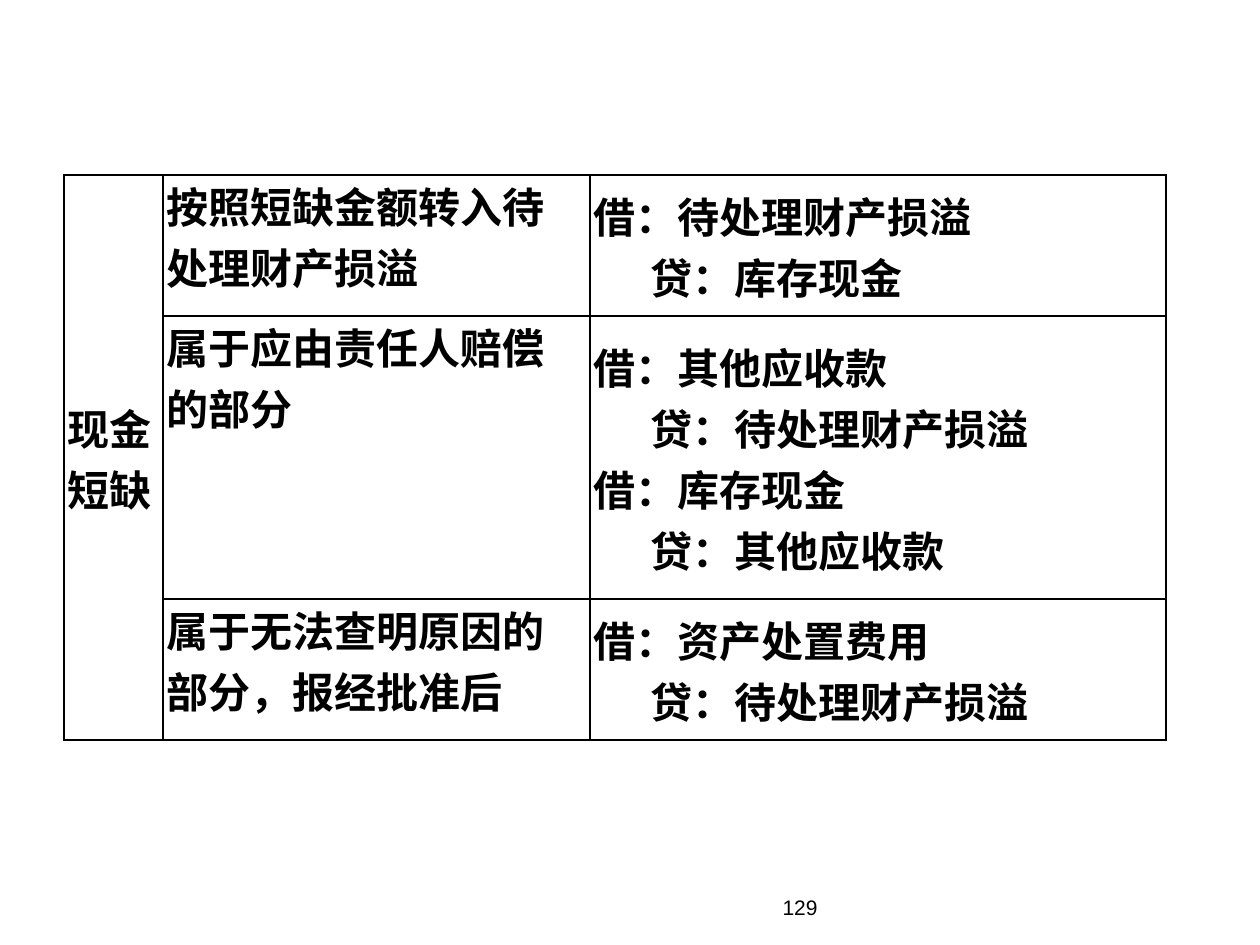
import dataclasses

import lxml.etree
import pptx
import pptx.dml.color
import pptx.enum.text
import pptx.oxml.ns
import pptx.util

EMU_PER_PX = 914400 / 126
ANCHOR = pptx.enum.text.MSO_ANCHOR
ALIGN = pptx.enum.text.PP_ALIGN


@dataclasses.dataclass(frozen=True)
class Theme:
    ink: str = "000000"
    body_font: str = "Noto Sans CJK SC"
    number_font: str = "Arial"
    body_size: int = 24
    number_size: int = 12
    border_width: int = 1
    cell_inset: int = 4
    credit_indent: int = 57


def px(length):
    return pptx.util.Emu(round(length * EMU_PER_PX))


def add_child(parent, tag, **attributes):
    return lxml.etree.SubElement(parent, pptx.oxml.ns.qn(tag), attributes)


def write_text(paragraph, text, *, font, size, color, bold=False, align=ALIGN.LEFT, indent=0):
    paragraph.alignment = align
    if indent:
        paragraph._p.get_or_add_pPr().set("marL", str(px(indent)))
    run = paragraph.add_run()
    run.text = text
    run.font.name = font
    run.font.size = pptx.util.Pt(size)
    run.font.bold = bold
    run.font.color.rgb = pptx.dml.color.RGBColor.from_string(color)
    add_child(run._r.get_or_add_rPr(), "a:ea", typeface=font)


class SlideBuilder:
    """Draws tables and text on the current slide in one theme."""

    def __init__(self, slide, theme):
        self.slide = slide
        self.theme = theme

    def border(self, cell):
        properties = cell._tc.get_or_add_tcPr()
        width = str(pptx.util.Pt(self.theme.border_width))
        for side in ("a:lnL", "a:lnR", "a:lnT", "a:lnB"):
            line = add_child(properties, side, w=width)
            add_child(add_child(line, "a:solidFill"), "a:srgbClr", val=self.theme.ink)

    def fill_cell(self, cell, lines, anchor):
        theme = self.theme
        cell.vertical_anchor = anchor
        for index, (text, indent) in enumerate(lines):
            frame = cell.text_frame
            paragraph = frame.add_paragraph() if index else frame.paragraphs[0]
            write_text(paragraph, text, font=theme.body_font, size=theme.body_size,
                       color=theme.ink, bold=True, indent=indent)

    def table(self, left, top, widths, heights):
        frame = self.slide.shapes.add_table(
            len(heights), len(widths), px(left), px(top), px(sum(widths)), px(sum(heights)))
        table = frame.table
        table.first_row = table.horz_banding = False
        for column, width in zip(table.columns, widths):
            column.width = px(width)
        for row, height in zip(table.rows, heights):
            row.height = px(height)
        for cell in table.iter_cells():
            cell.margin_left = cell.margin_right = px(self.theme.cell_inset)
            cell.margin_top = cell.margin_bottom = 0
            self.border(cell)
            cell.fill.background()
        return table

    def slide_number(self, text, left, top, width, height):
        box = self.slide.shapes.add_textbox(px(left), px(top), px(width), px(height))
        frame = box.text_frame
        frame.word_wrap = True
        frame.vertical_anchor = ANCHOR.BOTTOM
        write_text(frame.paragraphs[0], text, font=self.theme.number_font,
                   size=self.theme.number_size, color=self.theme.ink, align=ALIGN.RIGHT)


def main():
    presentation = pptx.Presentation()
    presentation.slide_width = px(1260)
    presentation.slide_height = px(945)
    slide = presentation.slides.add_slide(presentation.slide_layouts[6])
    theme = Theme()
    builder = SlideBuilder(slide, theme)

    cases = [
        ("按照短缺金额转入待处理财产损溢", [("待处理财产损溢", "库存现金")]),
        ("属于应由责任人赔偿的部分", [("其他应收款", "待处理财产损溢"), ("库存现金", "其他应收款")]),
        ("属于无法查明原因的部分，报经批准后", [("资产处置费用", "待处理财产损溢")]),
    ]
    table = builder.table(64, 175, widths=[99, 427, 576], heights=[141, 283, 141])
    table.cell(0, 0).merge(table.cell(len(cases) - 1, 0))
    builder.fill_cell(table.cell(0, 0), [("现金短缺", 0)], ANCHOR.MIDDLE)
    for row, (situation, entries) in enumerate(cases):
        builder.fill_cell(table.cell(row, 1), [(situation, 0)], ANCHOR.TOP)
        lines = []
        for debit, credit in entries:
            lines += [(f"借：{debit}", 0), (f"贷：{credit}", theme.credit_indent)]
        builder.fill_cell(table.cell(row, 2), lines, ANCHOR.MIDDLE)

    builder.slide_number("129", 431, 861, 399, 65)
    presentation.save("out.pptx")


if __name__ == "__main__":
    main()
